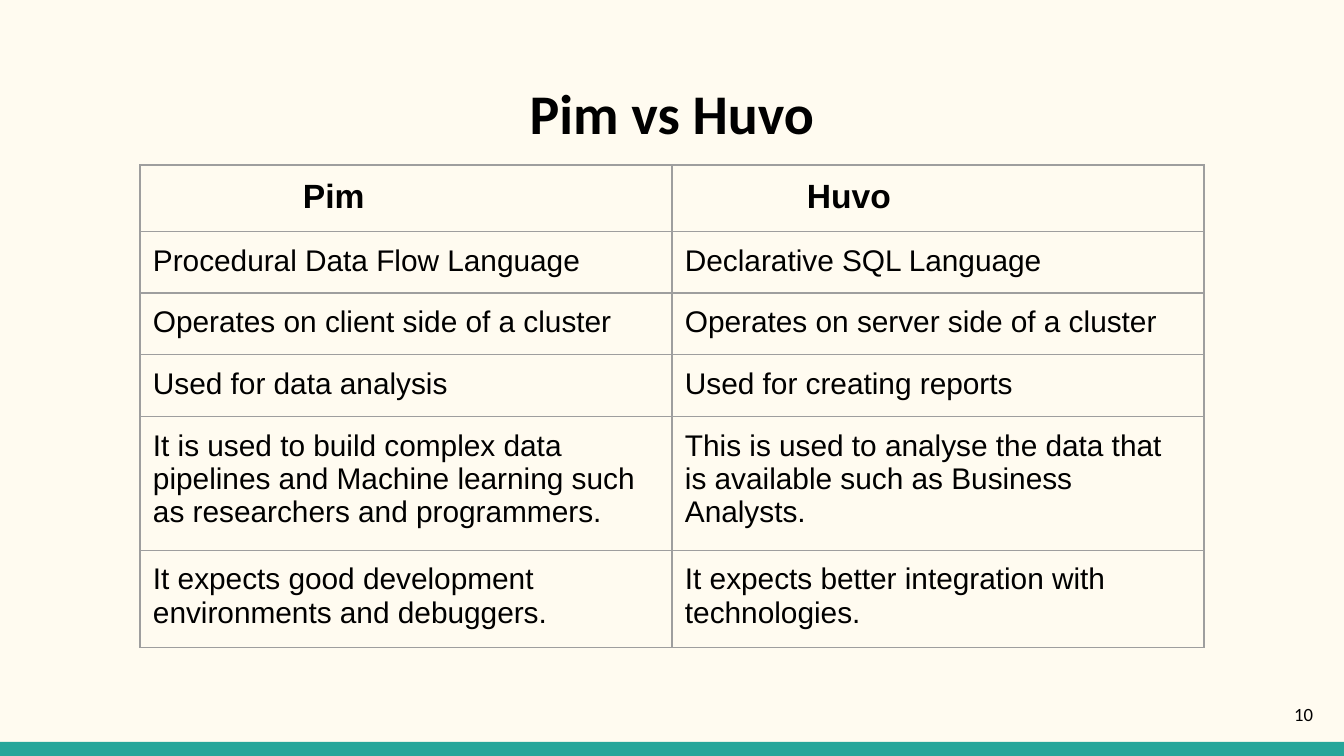
from lxml.etree import SubElement
from pptx import Presentation
from pptx.dml.color import RGBColor
from pptx.enum.shapes import MSO_SHAPE as Shape
from pptx.enum.text import MSO_ANCHOR as Anchor, PP_ALIGN as Align
from pptx.oxml.ns import qn
from pptx.util import Emu, Pt

WIDTH, HEIGHT = 1344, 756
EMU_PER_PX = 9144000 / WIDTH
INSET = 13

CREAM = RGBColor(0xFF, 0xFB, 0xF0)
TEAL = RGBColor(0x26, 0xA6, 0x9A)
BLACK = RGBColor(0, 0, 0)
GREY = RGBColor(0x9E, 0x9E, 0x9E)

HEADINGS = ["Pim", "Huvo"]
HEADING_INDENTS = [150, 122]
COMPARISON = [
    ["Procedural Data Flow Language", "Declarative SQL Language"],
    ["Operates on client side of a cluster", "Operates on server side of a cluster"],
    ["Used for data analysis", "Used for creating reports"],
    ["It is used to build complex data pipelines and Machine learning such as "
     "researchers and programmers.",
     "This is used to analyse the data that is available such as Business Analysts."],
    ["It expects good development environments and debuggers.",
     "It expects better integration with technologies."],
]


def px(length):
    return Emu(round(length * EMU_PER_PX))


class SlideBuilder:
    title_font = "Calibri"
    table_font = "Arial"

    def __init__(self, slide):
        self.slide = slide
        slide.background.fill.solid()
        slide.background.fill.fore_color.rgb = CREAM

    def bar(self, left, top, width, height, color):
        bar = self.slide.shapes.add_shape(
            Shape.RECTANGLE, px(left), px(top), px(width), px(height))
        bar.shadow.inherit = False
        bar.fill.solid()
        bar.fill.fore_color.rgb = color
        bar.line.fill.background()

    def run(self, paragraph, text, font, size, bold=False):
        run = paragraph.add_run()
        run.text = text
        run.font.name = font
        run.font.size = Pt(size)
        run.font.bold = bold
        run.font.color.rgb = BLACK

    def inset(self, holder):
        """Give a text frame or a cell the same margin on all four sides."""
        holder.margin_left = holder.margin_right = px(INSET)
        holder.margin_top = holder.margin_bottom = px(INSET)

    def text(self, left, top, width, height, text, size, align,
             anchor=Anchor.TOP, bold=False):
        frame = self.slide.shapes.add_textbox(
            px(left), px(top), px(width), px(height)).text_frame
        frame.word_wrap = True
        frame.vertical_anchor = anchor
        self.inset(frame)
        frame.paragraphs[0].alignment = align
        self.run(frame.paragraphs[0], text, self.title_font, size, bold)

    def borders(self, cell):
        properties = cell._tc.get_or_add_tcPr()
        for side in ("a:lnL", "a:lnR", "a:lnT", "a:lnB"):
            line = SubElement(properties, qn(side), w=str(Pt(0.75)))
            fill = SubElement(line, qn("a:solidFill"))
            SubElement(fill, qn("a:srgbClr"), val=str(GREY))

    def cell(self, cell, text, size, bold=False, indent=0):
        self.inset(cell)
        self.borders(cell)
        cell.fill.background()
        paragraph = cell.text_frame.paragraphs[0]
        if indent:
            paragraph._p.get_or_add_pPr().set("marL", str(px(indent)))
        self.run(paragraph, text, self.table_font, size, bold)

    def table(self, left, top, column_width, row_height, headings, indents, body):
        """Rows start at row_height and grow to fit their text."""
        rows, columns = len(body) + 1, len(headings)
        table = self.slide.shapes.add_table(
            rows, columns, px(left), px(top),
            px(column_width * columns), px(row_height * rows)).table
        table.first_row = table.horz_banding = False
        for column in table.columns:
            column.width = px(column_width)
        for row in table.rows:
            row.height = px(row_height)
        for c, (heading, indent) in enumerate(zip(headings, indents)):
            self.cell(table.cell(0, c), heading, 18, bold=True, indent=indent)
        for r, entries in enumerate(body, start=1):
            for c, entry in enumerate(entries):
                self.cell(table.cell(r, c), entry, 16)


def main():
    deck = Presentation()
    deck.slide_width, deck.slide_height = px(WIDTH), px(HEIGHT)
    builder = SlideBuilder(deck.slides.add_slide(deck.slide_layouts[6]))
    builder.bar(0, 742, WIDTH, 14, TEAL)
    builder.text(46, 66, 1252, 90, " vs ".join(HEADINGS), 30, Align.CENTER, bold=True)
    builder.text(1246, 685, 80, 58, "10", 10, Align.RIGHT, Anchor.MIDDLE)
    builder.table(140, 165, 532, 56, HEADINGS, HEADING_INDENTS, COMPARISON)
    deck.save("out.pptx")


if __name__ == "__main__":
    main()
